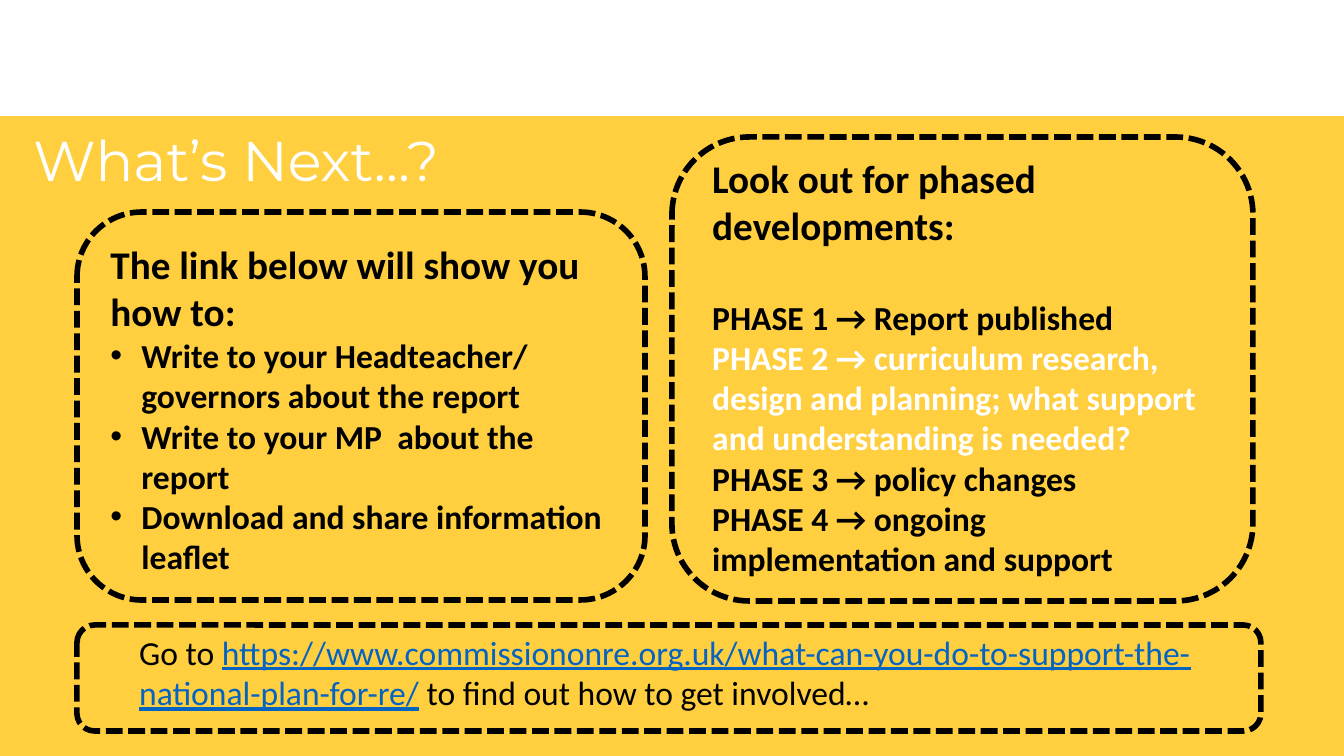
import pptx
import pptx.util
import pptx.dml.color
import pptx.enum.dml
import pptx.enum.shapes
import pptx.enum.text
import pptx.oxml.ns
import lxml.etree

RGB = pptx.dml.color.RGBColor
YELLOW = RGB(0xFF, 0xCF, 0x40)
WHITE = RGB(0xFF, 0xFF, 0xFF)
BLACK = RGB(0, 0, 0)
LINK = RGB(0x05, 0x63, 0xC1)
PX = 914400 / 134.4
INDENT = 31

# Content
TITLE = "What’s Next…?"
ACTIONS_HEAD = "The link below will show you how to:"
ACTIONS = [
    "Write to your Headteacher/ governors about the report",
    "Write to your MP  about the report",
    "Download and share information leaflet",
]
PHASES_HEAD = "Look out for phased developments:"
PHASES = [
    ("PHASE 1 → Report published", BLACK),
    ("PHASE 2 → curriculum research, design and planning; "
     "what support and understanding is needed?", WHITE),
    ("PHASE 3 → policy changes", BLACK),
    ("PHASE 4 → ongoing implementation and support", BLACK),
]
INVOLVED = [
    ("Go to ", BLACK, False),
    ("https://www.commissiononre.org.uk/what-can-you-do-to-support-the-"
     "national-plan-for-re/", LINK, True),
    (" to find out how to get involved…", BLACK, False),
]

# Places in px: left, top, width, height
BAND = (0, 0, 1344, 116)
TITLE_BOX = (20, 126, 1008, 146)
FRAMES = [(672, 137, 581, 464), (77, 212, 568, 388), (77, 625, 1184, 106)]
PHASES_BOX = (699, 148, 531, 441)
ACTIONS_BOX = (97, 234, 524, 376)
INVOLVED_BOX = (126, 625, 1106, 95)


def emu(px):
    return pptx.util.Emu(round(px * PX))


def place(sp, box):
    sp.left, sp.top, sp.width, sp.height = map(emu, box)


def frame_text(sp):
    tf = sp.text_frame
    tf.word_wrap = True
    tf.auto_size = pptx.enum.text.MSO_AUTO_SIZE.NONE
    tf.vertical_anchor = pptx.enum.text.MSO_ANCHOR.TOP
    return tf


def add_text(tf, text, size=18, color=BLACK, font="Calibri", bold=False,
             underline=False, before=0, spacing=1.0, bullet=False, same=False):
    """Add a run, in a new paragraph unless same is set."""
    p = tf.paragraphs[-1]
    if p.runs and not same:
        p = tf.add_paragraph()
    if not p.runs:
        pPr = p._p.get_or_add_pPr()
        indent = emu(INDENT) if bullet else 0
        pPr.set("marL", str(indent))
        pPr.set("indent", str(-indent))
        tag = "a:buChar" if bullet else "a:buNone"
        bu = lxml.etree.SubElement(pPr, pptx.oxml.ns.qn(tag))
        if bullet:
            bu.set("char", "•")
        p.alignment = pptx.enum.text.PP_ALIGN.LEFT
        p.line_spacing = spacing
        p.space_before = pptx.util.Pt(before)
        p.space_after = pptx.util.Pt(0)
    r = p.add_run()
    r.text = text
    r.font.size = pptx.util.Pt(size)
    r.font.name = font
    r.font.bold = bold
    r.font.underline = underline
    r.font.color.rgb = color


def add_shape(s, kind, box):
    sp = s.shapes.add_shape(kind, *map(emu, box))
    sp.shadow.inherit = False
    return sp


prs = pptx.Presentation()
prs.slide_width, prs.slide_height = emu(1344), emu(756)
s = prs.slides.add_slide(prs.slide_layouts[1])
s.background.fill.solid()
s.background.fill.fore_color.rgb = YELLOW

SHAPE = pptx.enum.shapes.MSO_SHAPE

# White band at the top
band = add_shape(s, SHAPE.RECTANGLE, BAND)
band.fill.solid()
band.fill.fore_color.rgb = WHITE
band.line.fill.background()

# Dashed frames
for box in FRAMES:
    sp = add_shape(s, SHAPE.ROUNDED_RECTANGLE, box)
    sp.fill.background()
    sp.line.color.rgb = BLACK
    sp.line.width = pptx.util.Pt(3)
    sp.line.dash_style = pptx.enum.dml.MSO_LINE.SQUARE_DOT

# Title
title = s.shapes.title
place(title, TITLE_BOX)
add_text(frame_text(title), TITLE, size=30, color=WHITE, font="Montserrat",
         spacing=0.9)

# Actions list
body = s.placeholders[1]
place(body, ACTIONS_BOX)
tf = frame_text(body)
add_text(tf, ACTIONS_HEAD, size=21, bold=True)
for action in ACTIONS:
    add_text(tf, action, bold=True, bullet=True)

# Phases
tf = frame_text(s.shapes.add_textbox(*map(emu, PHASES_BOX)))
add_text(tf, PHASES_HEAD, size=21, bold=True)
for i, (phase, color) in enumerate(PHASES):
    add_text(tf, phase, color=color, bold=True, before=0 if i else 25.6)

# How to get involved
tf = frame_text(s.shapes.add_textbox(*map(emu, INVOLVED_BOX)))
for text, color, underline in INVOLVED:
    add_text(tf, text, color=color, underline=underline, same=True)

prs.save("out.pptx")
